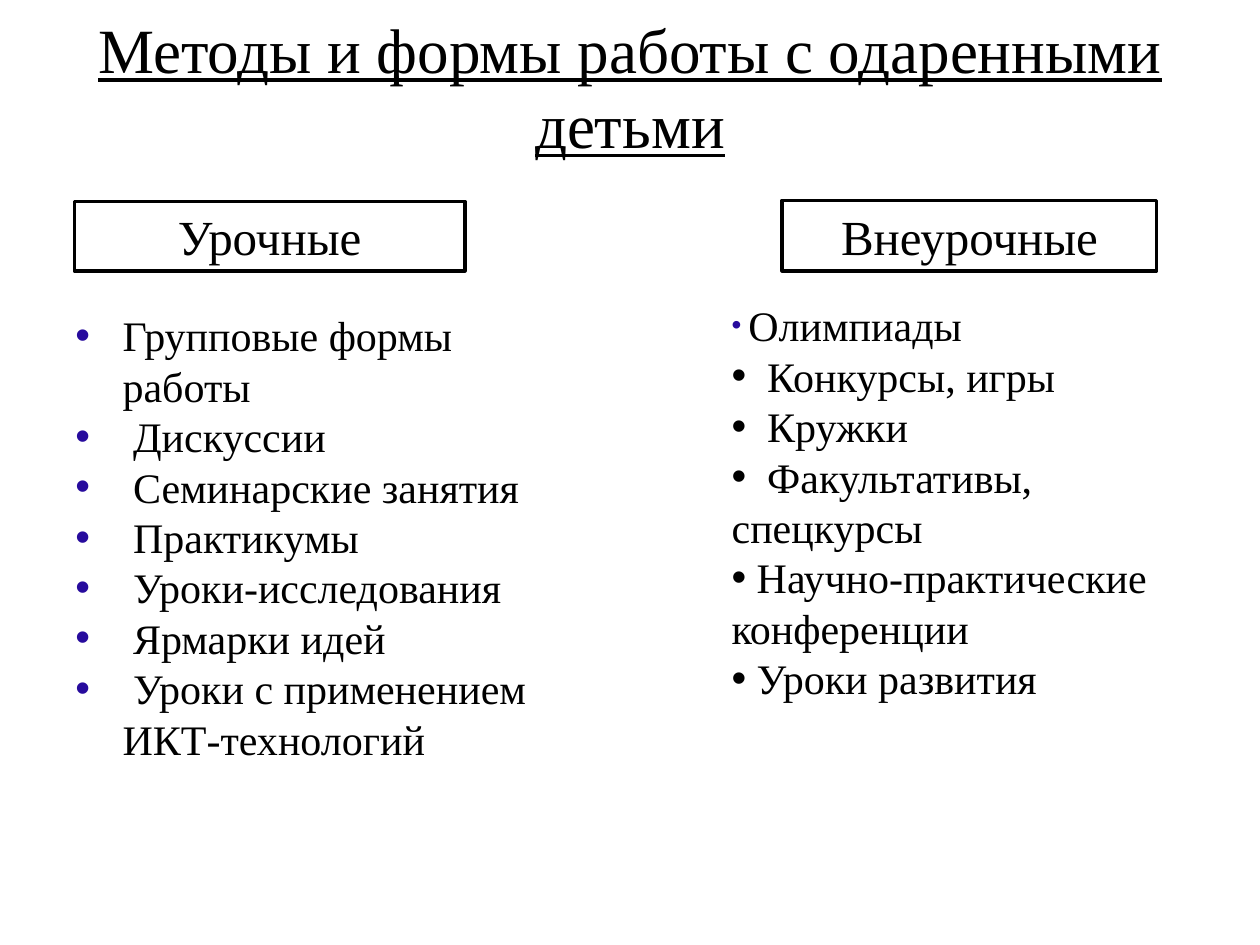
from pptx import Presentation
from pptx.dml.color import RGBColor
from pptx.enum.shapes import MSO_SHAPE
from pptx.enum.text import MSO_ANCHOR, PP_ALIGN
from pptx.oxml.ns import qn
from pptx.util import Pt
from lxml.etree import SubElement

BLACK, WHITE, VIOLET = "000000", "FFFFFF", "270B9D"


def color(value):
    return RGBColor.from_string(value)


def add_text(p, text, size=24, font="Times New Roman", fill=BLACK,
             bold=False, underline=False):
    r = p.add_run()
    r.text = text
    r.font.size = Pt(size)
    r.font.name = font
    r.font.color.rgb = color(fill)
    r.font.bold = bold
    r.font.underline = underline


def add_bullet(p, hanging=0, fill=None):
    """Give the paragraph a round bullet; without fill it takes the text colour."""
    pPr = p._p.get_or_add_pPr()
    pPr.set("marL", str(Pt(hanging)))
    pPr.set("indent", str(-Pt(hanging)))
    if fill:
        SubElement(SubElement(pPr, qn("a:buClr")), qn("a:srgbClr"), val=fill)
    SubElement(pPr, qn("a:buFont"), typeface="Arial")
    SubElement(pPr, qn("a:buChar"), char="•")


class SlideBuilder:
    """Holds the style and the current slide."""

    line_width = 2
    title_size = 36
    header_size = 28

    def __init__(self, s):
        self.s = s

    def text_box(self, x, y, w, h, anchor=MSO_ANCHOR.TOP):
        tf = self.s.shapes.add_textbox(Pt(x), Pt(y), Pt(w), Pt(h)).text_frame
        tf.word_wrap = True
        tf.vertical_anchor = anchor
        return tf

    def title(self, text, *box):
        p = self.text_box(*box, anchor=MSO_ANCHOR.MIDDLE).paragraphs[0]
        p.alignment = PP_ALIGN.CENTER
        add_text(p, text, size=self.title_size, underline=True)

    def header(self, text, x, y, w, h):
        sp = self.s.shapes.add_shape(MSO_SHAPE.RECTANGLE, Pt(x), Pt(y), Pt(w), Pt(h))
        sp.shadow.inherit = False
        sp.fill.solid()
        sp.fill.fore_color.rgb = color(WHITE)
        sp.line.color.rgb = color(BLACK)
        sp.line.width = Pt(self.line_width)
        tf = sp.text_frame
        tf.vertical_anchor = MSO_ANCHOR.MIDDLE
        p = tf.paragraphs[0]
        p.alignment = PP_ALIGN.CENTER
        add_text(p, text, size=self.header_size)

    def bullets(self, items, *box, hanging=0, fill=None, lead=None):
        """Add a list; lead is the format of a space that opens the first item."""
        tf = self.text_box(*box)
        for i, item in enumerate(items):
            p = tf.add_paragraph() if i else tf.paragraphs[0]
            add_bullet(p, hanging, fill)
            if lead and i == 0:
                add_text(p, " ", **lead)
            add_text(p, item)


def main():
    prs = Presentation()
    prs.slide_width, prs.slide_height = Pt(720), Pt(540)
    slide = SlideBuilder(prs.slides.add_slide(prs.slide_layouts[6]))

    slide.title("Методы и формы работы с одаренными детьми", 8.64, 9.36, 702.72, 79.2)
    slide.bullets(
        ["Групповые формы работы", " Дискуссии", " Семинарские занятия",
         " Практикумы", " Уроки-исследования", " Ярмарки идей",
         " Уроки с применением ИКТ-технологий"],
        36, 173.5, 296, 309, hanging=27, fill=VIOLET)
    slide.bullets(
        ["Олимпиады", "  Конкурсы, игры", "  Кружки",
         "  Факультативы, спецкурсы", " Научно-практические конференции",
         " Уроки развития"],
        411, 167.8, 294.5, 269.3,
        lead={"size": 16, "font": "Karla", "fill": VIOLET, "bold": True})
    slide.header("Урочные", 42.5, 115.2, 223.2, 39.6)
    slide.header("Внеурочные", 447, 114.5, 214, 40.3)

    prs.save("out.pptx")


if __name__ == "__main__":
    main()
